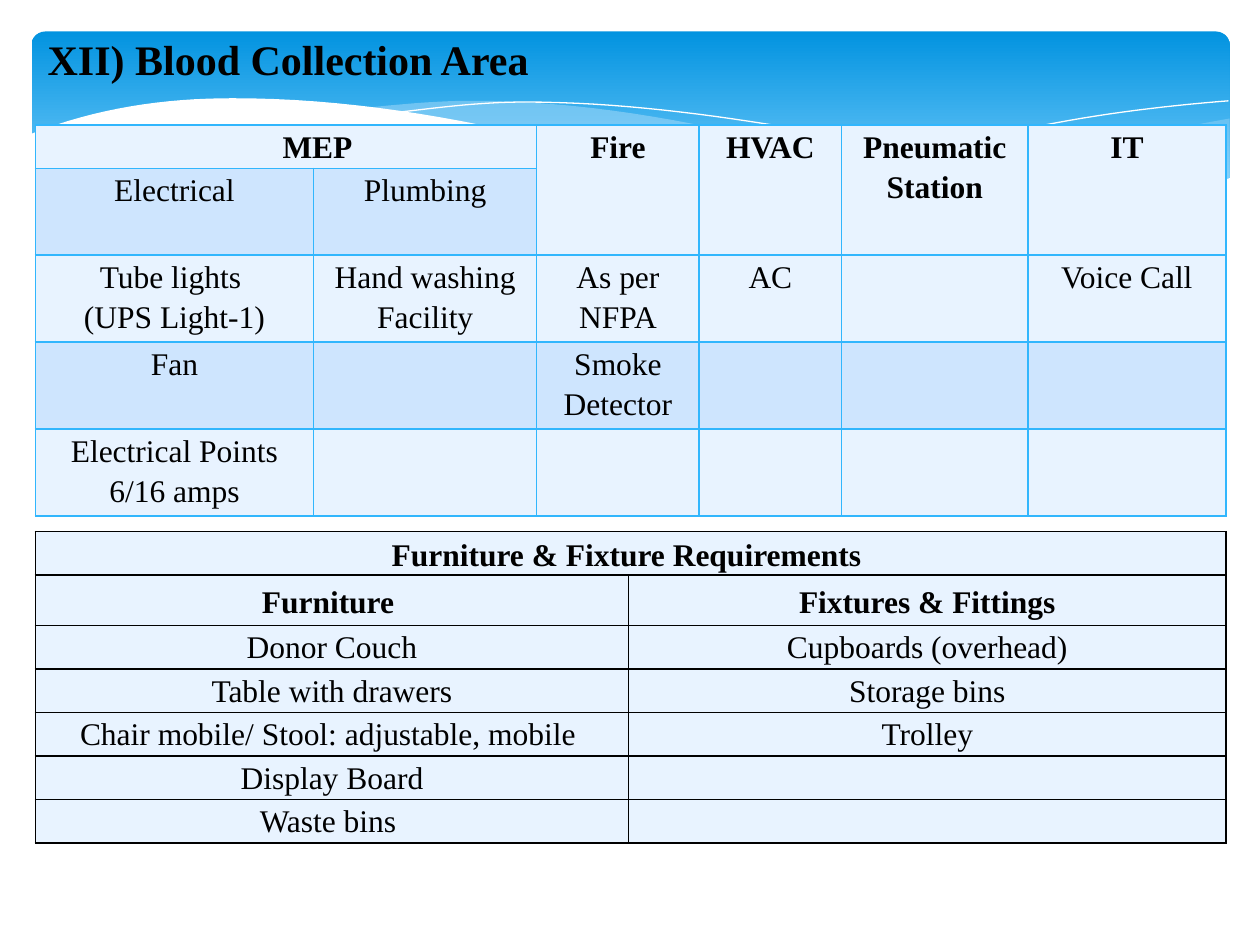
"""Build the Blood Collection Area slide with its wave banner and two tables."""
from dataclasses import dataclass
from itertools import pairwise
from typing import NamedTuple, Optional

import pptx
import pptx.dml.color
import pptx.enum.shapes
import pptx.enum.text
import pptx.oxml
import pptx.oxml.ns
import pptx.util
from lxml import etree

Inches = pptx.util.Inches
Pt = pptx.util.Pt
FONT = "Times New Roman"
BLACK, WHITE, SKY = "000000", "FFFFFF", "C6E7FC"
PALE, MID = "E8F3FF", "CEE5FE"
LEFT = 0.28
STEPS = 16


class Knot(NamedTuple):
    x: float
    y: float
    slope: float = 0


@dataclass
class Wave:
    edges: list[list[Knot]]
    fill: Optional[str] = None
    alpha: int = 100


@dataclass
class Grid:
    top: float
    cols: list[float]
    rows: list[float]
    cells: list[list[str]]
    fills: list[str]
    edge: str
    heads: int
    spans: list[tuple[int, int, int, int]]
    middle: bool = False
    indent: float = 0


RIGHT = Wave([
    [Knot(9.76, 0.94, -0.18), Knot(8.61, 1.18, -0.25), Knot(6.61, 1.6, -0.18)],
    [Knot(6.61, 1.6, 0.13), Knot(8.1, 1.72), Knot(9.76, 1.41, -0.4)],
], SKY, 29)
CENTRE = Wave([
    [Knot(8.93, 1.67, 0.1), Knot(6.29, 1.16, 0.25), Knot(3.75, 0.8), Knot(2.86, 0.86, -0.1)],
    [Knot(2.86, 0.86, 0.1), Knot(4.49, 1.16, 0.24), Knot(8.15, 1.73), Knot(8.93, 1.67, -0.12)],
], SKY, 40)
FALL = Wave([
    [Knot(3.09, 0.9, -0.12), Knot(4.16, 0.81), Knot(6.36, 1.03, 0.17), Knot(9.07, 1.66, 0.28)],
])
RISE = Wave([
    [Knot(6.13, 1.51, -0.25), Knot(8.06, 1.04, -0.22), Knot(9.75, 0.8, -0.08)],
])
FRONT = Wave([
    [Knot(9.77, 1.41, -0.37), Knot(8.09, 1.71), Knot(4.47, 1.14, 0.25),
     Knot(1.85, 0.78), Knot(0.23, 1.07, -0.4)],
    [Knot(0.23, 2.24), Knot(9.77, 2.24)],
], WHITE)

SERVICES = Grid(
    top=0.99, cols=[2.21, 1.77, 1.29, 1.13, 1.48, 1.57], rows=[0.34] + [0.69] * 4,
    cells=[
        ["MEP", "", "Fire", "HVAC", "Pneumatic Station", "IT"],
        ["Electrical", "Plumbing", "", "", "", ""],
        ["Tube lights \n(UPS Light-1)", "Hand washing Facility", "As per NFPA", "AC", "", "Voice Call"],
        ["Fan", "", "Smoke Detector", "", "", ""],
        ["Electrical Points 6/16 amps", "", "", "", "", ""],
    ],
    fills=[PALE, MID], edge="31B6FD", heads=1, indent=0.5,
    spans=[(0, 0, 0, 1)] + [(0, col, 1, col) for col in range(2, 6)])
FITTINGS = Grid(
    top=4.22, cols=[4.71, 4.74], rows=[0.34, 0.4] + [0.34] * 5,
    cells=[
        ["Furniture & Fixture Requirements ", ""],
        ["Furniture ", "Fixtures & Fittings"],
        ["Donor Couch", "Cupboards (overhead)"],
        ["Table with drawers", "Storage bins"],
        ["Chair mobile/ Stool: adjustable, mobile ", "Trolley"],
        ["Display Board", ""],
        ["Waste bins ", ""],
    ],
    fills=[PALE], edge=BLACK, heads=2, middle=True, spans=[(0, 0, 0, 1)])


def shade(color: str) -> pptx.dml.color.RGBColor:
    return pptx.dml.color.RGBColor.from_string(color)


def paint(fill, color: str) -> None:
    fill.solid()
    fill.fore_color.rgb = shade(color)


def style(para, size: int, bold: bool) -> None:
    font = para.font
    font.name, font.size, font.bold = FONT, Pt(size), bold
    paint(font.fill, BLACK)


def blend(start: Knot, end: Knot, part: float) -> tuple[int, int]:
    span, rest = end.x - start.x, 1 - part
    y = (start.y * rest * rest * (1 + 2 * part) + end.y * part * part * (3 - 2 * part)
         + span * part * rest * (start.slope * rest - end.slope * part))
    return Inches(start.x + span * part), Inches(y)


def trace(edge: list[Knot]) -> list[tuple[int, int]]:
    return [blend(start, end, step / STEPS)
            for start, end in pairwise(edge) for step in range(STEPS + 1)]


def draw_band(slide) -> None:
    kind = pptx.enum.shapes.MSO_SHAPE.ROUNDED_RECTANGLE
    band = slide.shapes.add_shape(kind, Inches(0.25), Inches(0.25), Inches(9.51), Inches(1.56))
    band.adjustments[0] = 0.07
    band.shadow.inherit = False
    band.line.fill.background()
    band.fill.gradient()
    band.fill.gradient_angle = 270
    for stop, color, place in zip(band.fill.gradient_stops, ("0293E0", "83D3FE"), (0, 0.9)):
        stop.color.rgb = shade(color)
        stop.position = place


def draw_wave(slide, wave: Wave) -> None:
    points = [point for edge in wave.edges for point in trace(edge)]
    pen = slide.shapes.build_freeform(*points[0])
    pen.add_line_segments(points[1:], close=wave.fill is not None)
    shape = pen.convert_to_shape()
    shape.shadow.inherit = False
    if wave.fill is None:
        shape.fill.background()
        paint(shape.line.fill, WHITE)
        shape.line.width = Pt(0)
        return
    shape.line.fill.background()
    paint(shape.fill, wave.fill)
    if wave.alpha < 100:
        tint = shape._element.spPr.find(".//" + pptx.oxml.ns.qn("a:srgbClr"))
        etree.SubElement(tint, pptx.oxml.ns.qn("a:alpha"), val=str(wave.alpha * 1000))


def draw_title(slide) -> None:
    box = slide.shapes.add_textbox(Inches(LEFT), Inches(0.22), Inches(4.96), Inches(0.5))
    box.text_frame.word_wrap = True
    box.text_frame.auto_size = pptx.enum.text.MSO_AUTO_SIZE.SHAPE_TO_FIT_TEXT
    para = box.text_frame.paragraphs[0]
    para.text = "XII) Blood Collection Area"
    style(para, 24, True)


def draw_edges(cell, color: str) -> None:
    props = cell._tc.get_or_add_tcPr()
    for side in ("lnL", "lnR", "lnT", "lnB"):
        props.append(pptx.oxml.parse_xml(
            f'<a:{side} {pptx.oxml.ns.nsdecls("a")} w="{Pt(1)}"><a:solidFill>'
            f'<a:srgbClr val="{color}"/></a:solidFill></a:{side}>'))


def fill_cell(cell, text: str, grid: Grid, row: int) -> None:
    head = row < grid.heads
    draw_edges(cell, grid.edge)
    paint(cell.fill, grid.fills[row % len(grid.fills)])
    cell.margin_left = cell.margin_right = Inches(0.07)
    cell.margin_top = cell.margin_bottom = 0
    if head and grid.middle:
        cell.vertical_anchor = pptx.enum.text.MSO_ANCHOR.MIDDLE
    para = cell.text_frame.paragraphs[0]
    para.text = text
    para.alignment = pptx.enum.text.PP_ALIGN.CENTER
    para.line_spacing = 1.15
    para.space_after = Pt(10)
    style(para, 18, head)


def draw_grid(slide, grid: Grid) -> None:
    frame = slide.shapes.add_table(
        len(grid.rows), len(grid.cols), Inches(LEFT), Inches(grid.top),
        Inches(sum(grid.cols)), Inches(sum(grid.rows)))
    table = frame.table
    table.first_row = table.horz_banding = False
    for col, width in zip(table.columns, grid.cols):
        col.width = Inches(width)
    for row, height in zip(table.rows, grid.rows):
        row.height = Inches(height)
    for r, texts in enumerate(grid.cells):
        for c, text in enumerate(texts):
            fill_cell(table.cell(r, c), text, grid, r)
    for top, left, low, right in grid.spans:
        table.cell(top, left).merge(table.cell(low, right))
    if grid.indent:
        para = table.cell(0, 0).text_frame.paragraphs[0]
        para._p.get_or_add_pPr().set("marL", str(Inches(grid.indent)))


def main() -> None:
    deck = pptx.Presentation()
    deck.slide_width, deck.slide_height = Inches(10), Inches(7.5)
    slide = deck.slides.add_slide(deck.slide_layouts[6])
    draw_band(slide)
    for wave in (RIGHT, CENTRE, FALL, RISE, FRONT):
        draw_wave(slide, wave)
    draw_title(slide)
    for grid in (SERVICES, FITTINGS):
        draw_grid(slide, grid)
    deck.save("out.pptx")


if __name__ == "__main__":
    main()
